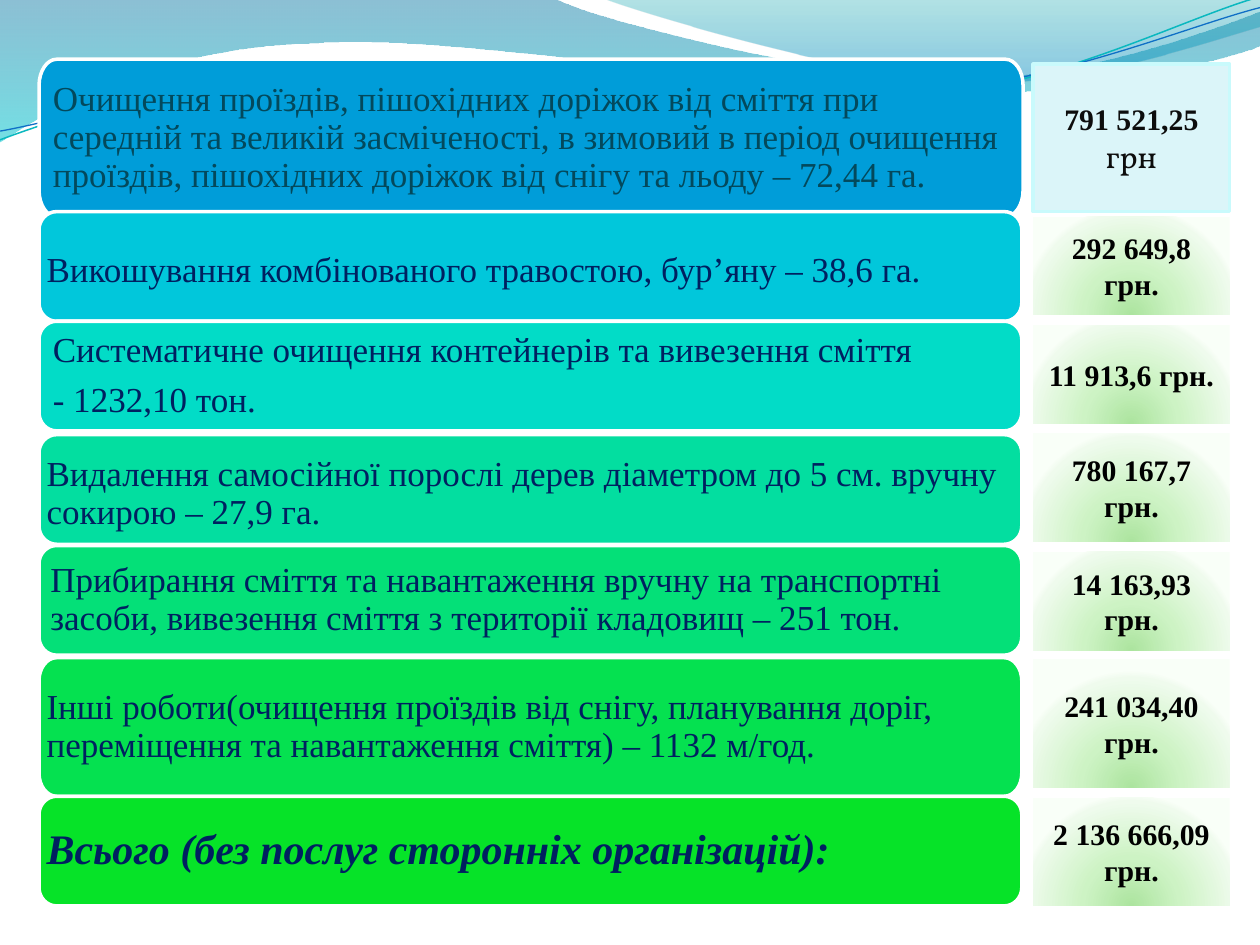
from math import cos, radians, sin

from lxml import etree
from pptx import Presentation
from pptx.dml.color import RGBColor
from pptx.enum.shapes import MSO_SHAPE
from pptx.enum.text import MSO_ANCHOR, PP_ALIGN
from pptx.oxml import parse_xml
from pptx.oxml.ns import nsdecls, qn
from pptx.util import Inches, Pt

SERIF = "Times New Roman"
NAVY = "002060"
BAR_LEFT = 0.31
STRAND_TILT = 2.7
LINEAR_DOWN = '<a:lin ang="5400000" scaled="0"/>'
GLOW_BELOW = ('<a:path path="circle"><a:fillToRect l="50000" t="130000" '
              'r="50000" b="-30000"/></a:path>')
GREEN_GLOW = [(0, "ACE49F", 100), (43, "CDF3C4", 100),
              (93, "EFFBED", 100), (100, "F9FFF8", 100)]


def rgb(value):
    return RGBColor.from_string(value)


def turn(segment, centre, degrees):
    """Rotate the x, y pairs of a segment clockwise about a centre."""
    c, s = cos(radians(degrees)), sin(radians(degrees))
    turned = []
    for x, y in zip(segment[::2], segment[1::2]):
        dx, dy = x - centre[0], y - centre[1]
        turned += [centre[0] + dx * c - dy * s, centre[1] + dx * s + dy * c]
    return tuple(turned)


def rounded_bar(left, top, width, height):
    """Return start and segments of a bar with elliptical corners."""
    rx, ry, pull = 0.14, height / 6, 0.45
    right, bottom = left + width, top + height
    return (left, top + ry), [
        (left, top + pull * ry, left + pull * rx, top, left + rx, top),
        (right - rx, top),
        (right - pull * rx, top, right, top + pull * ry, right, top + ry),
        (right, bottom - ry),
        (right, bottom - pull * ry, right - pull * rx, bottom, right - rx, bottom),
        (left + rx, bottom),
        (left + pull * rx, bottom, left, bottom - pull * ry, left, bottom - ry)]


class SlideBuilder:
    def __init__(self, slide):
        self.slide = slide

    def paint(self, shape, fill=None, line=None, width=2):
        shape.shadow.inherit = False
        if fill:
            shape.fill.solid()
            shape.fill.fore_color.rgb = rgb(fill)
        else:
            shape.fill.background()
        if line:
            shape.line.color.rgb = rgb(line)
            shape.line.width = Pt(width)
        else:
            shape.line.fill.background()

    def gradient(self, shape, stops, direction):
        """Fill with (position, colour, opacity) stops, all but colour in percent."""
        self.paint(shape)
        stop_xml = "".join(
            f'<a:gs pos="{pos * 1000}"><a:srgbClr val="{colour}">'
            f'<a:alpha val="{opacity * 1000}"/></a:srgbClr></a:gs>'
            for pos, colour, opacity in stops)
        fill = parse_xml(f'<a:gradFill {nsdecls("a")} rotWithShape="1">'
                         f'<a:gsLst>{stop_xml}</a:gsLst>{direction}</a:gradFill>')
        properties = shape.element.spPr
        properties.replace(properties.find(qn("a:noFill")), fill)

    def outline(self, start, segments, close=True):
        """Draw lines (2 numbers) and cubic curves (6 numbers)."""
        builder = self.slide.shapes.build_freeform(
            Inches(start[0]), Inches(start[1]), scale=1.0)
        for segment in segments:
            pairs = zip(segment[::2], segment[1::2])
            builder.add_line_segments([(Inches(x), Inches(y)) for x, y in pairs],
                                      close=False)
        shape = builder.convert_to_shape()
        track = next(shape.element.iter(qn("a:path")))
        steps = iter(track.findall(qn("a:lnTo")))
        for segment in segments:
            first = next(steps)
            if len(segment) == 6:
                first.tag = qn("a:cubicBezTo")
                for _ in range(2):
                    control = next(steps)
                    first.append(control[0])
                    track.remove(control)
        if close:
            etree.SubElement(track, qn("a:close"))
        return shape

    def wave(self, start, segments, stops):
        self.gradient(self.outline(start, segments), stops, LINEAR_DOWN)

    def strand(self, centre, start, segments, colour, width):
        level = [turn(segment, centre, STRAND_TILT) for segment in segments]
        line = self.outline(turn(start, centre, STRAND_TILT), level, close=False)
        line.rotation = 360 - STRAND_TILT
        self.paint(line, line=colour, width=width)

    def style(self, run, size, colour, bold=False, italic=False, face=SERIF):
        font = run.font
        font.name, font.size, font.bold, font.italic = face, Pt(size), bold, italic
        font.color.rgb = rgb(colour)

    def work(self, top, height, fill, text, inset, drop=0, width=7.8,
             colour=NAVY, size=20, strong=False):
        """Add a bar describing a job; drop lowers its text."""
        bar = self.outline(*rounded_bar(BAR_LEFT, top, width, height))
        self.paint(bar, fill, "FFFFFF")
        frame = bar.text_frame
        frame.word_wrap = True
        frame.vertical_anchor = MSO_ANCHOR.MIDDLE
        frame.margin_left = frame.margin_right = frame.margin_bottom = Inches(inset)
        frame.margin_top = Inches(inset + drop)
        frame.text = text
        for paragraph in frame.paragraphs:
            paragraph.alignment = PP_ALIGN.LEFT
            paragraph.line_spacing = 0.9
            paragraph.space_after = Pt(7)
            self.style(paragraph.runs[0], size, colour, strong, strong)

    def cost(self, top, height, text, colour="000000"):
        cell = self.slide.shapes.add_shape(
            MSO_SHAPE.RECTANGLE, Inches(8.2), Inches(top), Inches(1.56), Inches(height))
        frame = cell.text_frame
        frame.word_wrap = True
        frame.vertical_anchor = MSO_ANCHOR.MIDDLE
        frame.text = text
        for paragraph in frame.paragraphs:
            paragraph.alignment = PP_ALIGN.CENTER
            self.style(paragraph.runs[0], 17, colour, bold=True)
        return cell

    def glowing_cost(self, top, height, text):
        self.gradient(self.cost(top, height, text), GREEN_GLOW, GLOW_BELOW)

    def leading_cost(self, top, height, amount, unit):
        cell = self.cost(top, height, amount, "0D0D0D")
        self.paint(cell, "DBF5F9", "C9FAFC")
        unit_run = cell.text_frame.paragraphs[0].add_run()
        unit_run.text = unit
        self.style(unit_run, 18, "0D0D0D", face="Vollkorn")


def main():
    deck = Presentation()
    deck.slide_width, deck.slide_height = Inches(10), Inches(7.5)
    page = SlideBuilder(deck.slides.add_slide(deck.slide_layouts[6]))

    page.wave((0, 0), [(4.4, -0.01), (4.76, 0.17, 6.64, 0.63, 7.58, 0.63),
                       (8.53, 0.63, 9.58, 0.26, 10, 0.09), (10.01, 0.36),
                       (9.83, 0.44, 8.7, 0.76, 7.46, 0.75),
                       (6.22, 0.75, 3.82, 0.28, 2.57, 0.34),
                       (1.29, 0.36, 0.46, 0.83, -0.01, 1.13)],
              [(0, "0074A1", 45), (100, "00C6CF", 55)])
    page.wave((4.79, -0.01), [(5.09, 0.11, 6.82, 0.62, 7.69, 0.65),
                              (8.56, 0.69, 9.61, 0.32, 10, 0.21), (10, 0)],
              [(0, "00A1A9", 30), (80, "008BBF", 45)])
    page.strand((4.99, 0.57), (0, 1.11),
                [(0.48, 0.93, 1.58, 0.57, 2.77, 0.52),
                 (3.95, 0.47, 5.93, 0.89, 7.13, 0.8),
                 (8.33, 0.71, 9.38, 0.15, 9.98, -0.02)], "0AB8BF", 0.85)
    page.strand((4.99, 0.59), (0, 1.04),
                [(0.47, 0.96, 1.64, 0.61, 2.83, 0.56),
                 (4.03, 0.51, 5.97, 0.84, 7.17, 0.75),
                 (8.36, 0.67, 9.41, 0.21, 10, 0.06)], "0F6FC6", 0.75)

    page.work(0.47, 1.25, "009DD9", "Очищення проїздів, пішохідних доріжок від сміття при "
              "середній та великій засміченості, в зимовий в період очищення проїздів, "
              "пішохідних доріжок від снігу та льоду – 72,44 га.",
              0.11, width=7.81, colour="03495C")
    page.work(1.68, 0.87, "01C7DB",
              "Викошування комбінованого травостою, бур’яну – 38,6 га.", 0.06, drop=0.08)
    page.work(2.55, 0.87, "02DCC7", "Систематичне очищення контейнерів та вивезення сміття\n"
              "- 1232,10 тон.", 0.11)
    page.work(3.45, 0.87, "03DEA0", "Видалення самосійної порослі дерев діаметром до 5 см. "
              "вручну сокирою – 27,9 га.", 0.06, drop=0.08)
    page.work(4.33, 0.87, "04E078", "Прибирання сміття та навантаження вручну на транспортні "
              "засоби, вивезення сміття з території кладовищ – 251 тон.", 0.09)
    page.work(5.22, 1.1, "05E150", "Інші роботи(очищення проїздів від снігу, планування доріг, "
              "переміщення та навантаження сміття) – 1132 м/год.", 0.06)
    page.work(6.32, 0.87, "06E328", "Всього (без послуг сторонніх організацій):",
              0.06, size=24, strong=True)

    page.leading_cost(0.51, 1.17, "791 521,25 ", "грн")
    for top, height, amount in [(1.72, 0.78, "292 649,8\nгрн."),
                                (2.58, 0.78, "11 913,6 грн."),
                                (3.44, 0.86, "780 167,7 грн."),
                                (4.38, 0.78, "14 163,93 грн."),
                                (5.23, 1.02, "241 034,40 грн."),
                                (6.33, 0.86, "2 136 666,09 грн.")]:
        page.glowing_cost(top, height, amount)

    deck.save("out.pptx")


if __name__ == "__main__":
    main()
